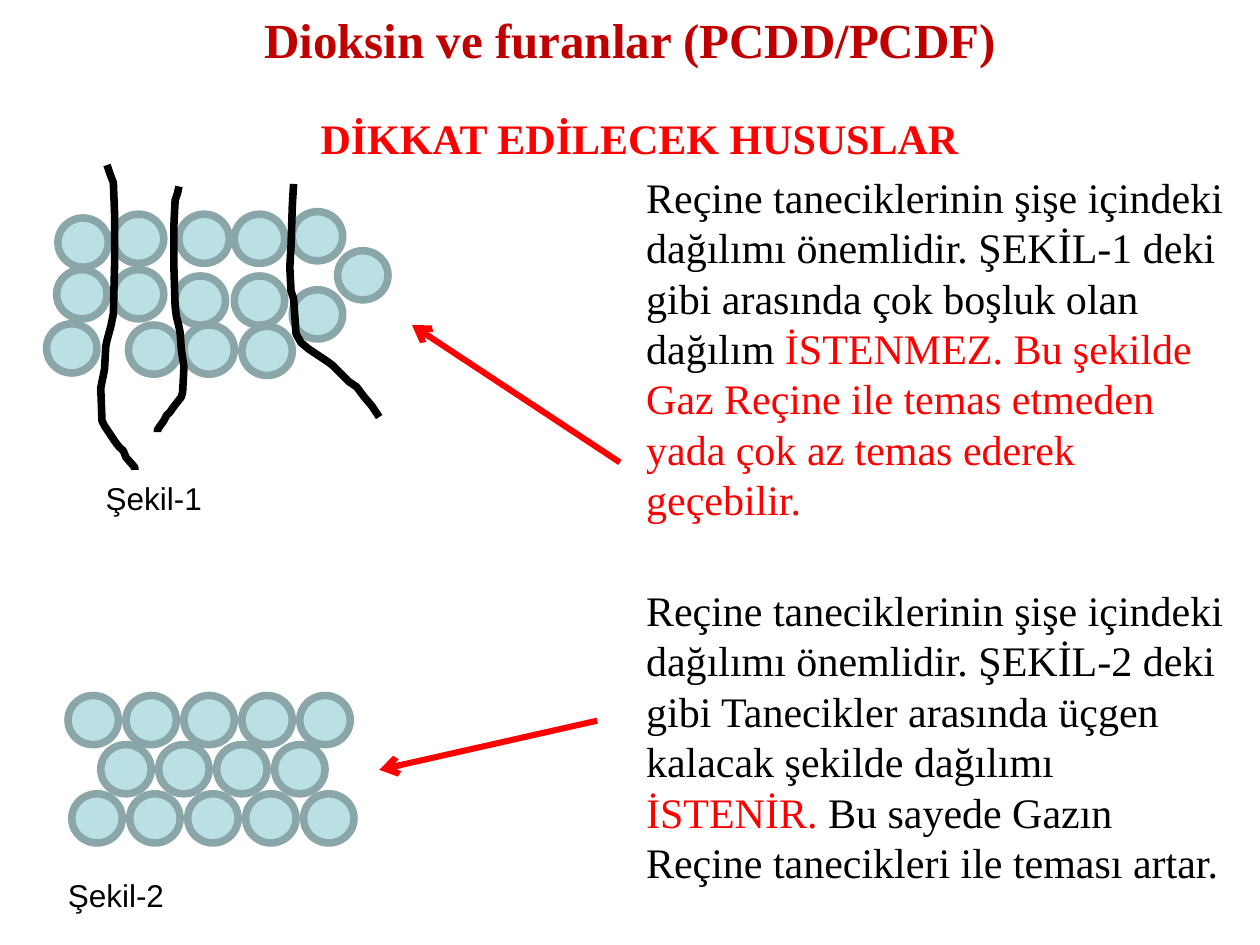
from dataclasses import dataclass
from typing import NamedTuple

from lxml.etree import SubElement
from pptx import Presentation
from pptx.dml.color import RGBColor
from pptx.enum.shapes import MSO_CONNECTOR, MSO_SHAPE
from pptx.enum.text import MSO_ANCHOR, MSO_AUTO_SIZE, PP_ALIGN
from pptx.oxml.ns import qn
from pptx.util import Inches, Pt


@dataclass(frozen=True)
class Theme:
    serif: str = "Times New Roman"
    sans: str = "Arial"
    title_size: float = 28
    body_size: float = 24
    caption_size: float = 18
    black: str = "000000"
    red: str = "FF0000"
    dark_red: str = "C00000"
    grain_fill: str = "BBE0E3"
    grain_line: str = "8AA6A8"
    stroke: float = 4.33
    arrow_stroke: float = 3.5


class Box(NamedTuple):
    left: float
    top: float
    width: float
    height: float


class Span(NamedTuple):
    text: str
    color: str


class TextItem(NamedTuple):
    box: Box
    spans: list[Span]
    font: str
    size: float
    bold: bool = False
    align: PP_ALIGN = PP_ALIGN.LEFT


class Point(NamedTuple):
    x: float
    y: float


class Arrow(NamedTuple):
    start: Point
    end: Point


class GrainRow(NamedTuple):
    left: float
    top: float
    count: int


T = Theme()
GRAIN_W, GRAIN_H, GRAIN_PITCH = 0.4, 0.39, 0.46

TITLE = TextItem(
    Box(0, 0, 10, 0.62), [Span("Dioksin ve furanlar (PCDD/PCDF)", T.dark_red)],
    T.serif, T.title_size, True, PP_ALIGN.CENTER)

TEXTS = [
    TextItem(Box(0.5, 0.84, 9.15, 0.51), [Span("DİKKAT EDİLECEK HUSUSLAR", T.red)],
             T.serif, T.body_size, True, PP_ALIGN.CENTER),
    TextItem(Box(5.03, 1.31, 4.79, 2.93), [
        Span("Reçine taneciklerinin şişe içindeki dağılımı önemlidir. ŞEKİL-1 deki "
             "gibi arasında çok boşluk olan dağılım ", T.black),
        Span("İSTENMEZ. Bu şekilde Gaz Reçine ile temas etmeden yada çok az temas "
             "ederek geçebilir.", T.red)], T.serif, T.body_size),
    TextItem(Box(5.03, 4.59, 4.8, 2.52), [
        Span("Reçine taneciklerinin şişe içindeki dağılımı önemlidir. ŞEKİL-2 deki "
             "gibi Tanecikler arasında üçgen kalacak şekilde dağılımı ", T.black),
        Span("İSTENİR. ", T.red),
        Span("Bu sayede Gazın Reçine tanecikleri ile teması artar.", T.black)],
        T.serif, T.body_size),
    TextItem(Box(0.74, 3.75, 2.14, 0.4), [Span("Şekil-1", T.black)], T.sans, T.caption_size),
    TextItem(Box(0.44, 6.9, 2.14, 0.4), [Span("Şekil-2", T.black)], T.sans, T.caption_size),
]

LOOSE_GRAINS = [Point(*xy) for xy in [
    (0.46, 1.73), (0.9, 1.7), (1.42, 1.7), (1.39, 2.19), (0.9, 2.14),
    (1.86, 2.19), (2.68, 1.99), (2.32, 2.3), (1.86, 1.7), (0.45, 2.14),
    (2.32, 1.68), (0.37, 2.57), (1.02, 2.58), (1.46, 2.58), (1.92, 2.59)]]

PACKED_ROWS = [GrainRow(0.54, 5.52, 5), GrainRow(0.8, 5.91, 4), GrainRow(0.57, 6.3, 5)]

GAS_PATHS = [[Point(*xy) for xy in path] for path in [
    [(1.42, 1.48), (1.41, 1.53), (1.39, 1.59), (1.38, 1.8), (1.38, 2.1),
     (1.39, 2.43), (1.4, 2.51), (1.42, 2.59), (1.43, 2.64), (1.44, 2.78),
     (1.46, 2.91), (1.45, 3.11), (1.44, 3.15), (1.37, 3.24), (1.35, 3.27),
     (1.32, 3.3), (1.3, 3.34), (1.25, 3.41), (1.25, 3.43)],
    [(2.33, 1.46), (2.32, 1.64), (2.31, 1.95), (2.3, 2.12), (2.31, 2.31),
     (2.33, 2.37), (2.35, 2.65), (2.39, 2.72), (2.45, 2.77), (2.51, 2.81),
     (2.6, 2.87), (2.64, 2.9), (2.69, 2.95), (2.77, 3.03), (2.83, 3.07),
     (2.89, 3.15), (2.95, 3.22), (2.99, 3.28), (3.01, 3.31)],
    [(0.85, 1.31), (0.87, 1.37), (0.9, 1.45), (0.91, 1.7), (0.91, 2.1),
     (0.9, 2.49), (0.88, 2.59), (0.85, 2.7), (0.84, 2.75), (0.83, 2.93),
     (0.8, 3.08), (0.81, 3.34), (0.83, 3.38), (0.91, 3.5), (0.94, 3.54),
     (0.98, 3.58), (1, 3.63), (1.07, 3.71), (1.07, 3.73)],
]]

ARROWS = [Arrow(Point(4.92, 3.67), Point(3.27, 2.58)),
          Arrow(Point(4.74, 5.72), Point(3.01, 6.11))]


def rgb(color: str) -> RGBColor:
    return RGBColor.from_string(color)


def set_line(sp, color: str, width: float) -> None:
    sp.line.color.rgb = rgb(color)
    sp.line.width = Pt(width)


def write_text(tf, item: TextItem) -> None:
    tf.word_wrap = True
    p = tf.paragraphs[0]
    p.alignment = item.align
    for span in item.spans:
        r = p.add_run()
        r.text = span.text
        r.font.name = item.font
        r.font.size = Pt(item.size)
        r.font.bold = item.bold
        r.font.color.rgb = rgb(span.color)


def add_title(s, item: TextItem) -> None:
    sp = s.shapes.title
    sp.left, sp.top, sp.width, sp.height = map(Inches, item.box)
    write_text(sp.text_frame, item)
    sp.text_frame.auto_size = MSO_AUTO_SIZE.NONE
    sp.text_frame.vertical_anchor = MSO_ANCHOR.MIDDLE


def add_text(s, item: TextItem) -> None:
    tf = s.shapes.add_textbox(*map(Inches, item.box)).text_frame
    write_text(tf, item)
    tf.auto_size = MSO_AUTO_SIZE.SHAPE_TO_FIT_TEXT


def add_grain(s, pos: Point) -> None:
    sp = s.shapes.add_shape(
        MSO_SHAPE.OVAL, *map(Inches, (pos.x, pos.y, GRAIN_W, GRAIN_H)))
    sp.shadow.inherit = False
    sp.fill.solid()
    sp.fill.fore_color.rgb = rgb(T.grain_fill)
    set_line(sp, T.grain_line, T.stroke)


def add_gas_path(s, path: list[Point]) -> None:
    points = [(Inches(x), Inches(y)) for x, y in path]
    fb = s.shapes.build_freeform(*points[0])
    fb.add_line_segments(points[1:], close=False)
    sp = fb.convert_to_shape()
    sp.shadow.inherit = False
    sp.fill.background()
    set_line(sp, T.black, T.stroke)
    SubElement(sp.line._get_or_add_ln(), qn("a:round"))


def add_arrow(s, arrow: Arrow) -> None:
    sp = s.shapes.add_connector(
        MSO_CONNECTOR.STRAIGHT, *map(Inches, (*arrow.start, *arrow.end)))
    set_line(sp, T.red, T.arrow_stroke)
    SubElement(sp.line._get_or_add_ln(), qn("a:tailEnd"), type="arrow")
    SubElement(sp._element.spPr, qn("a:effectLst"))


def main() -> None:
    prs = Presentation()
    prs.slide_width, prs.slide_height = Inches(10), Inches(7.5)
    s = prs.slides.add_slide(prs.slide_layouts[5])
    add_title(s, TITLE)
    for item in TEXTS:
        add_text(s, item)
    packed = [Point(row.left + i * GRAIN_PITCH, row.top)
              for row in PACKED_ROWS for i in range(row.count)]
    for pos in LOOSE_GRAINS + packed:
        add_grain(s, pos)
    for path in GAS_PATHS:
        add_gas_path(s, path)
    for arrow in ARROWS:
        add_arrow(s, arrow)
    prs.save("out.pptx")


if __name__ == "__main__":
    main()
